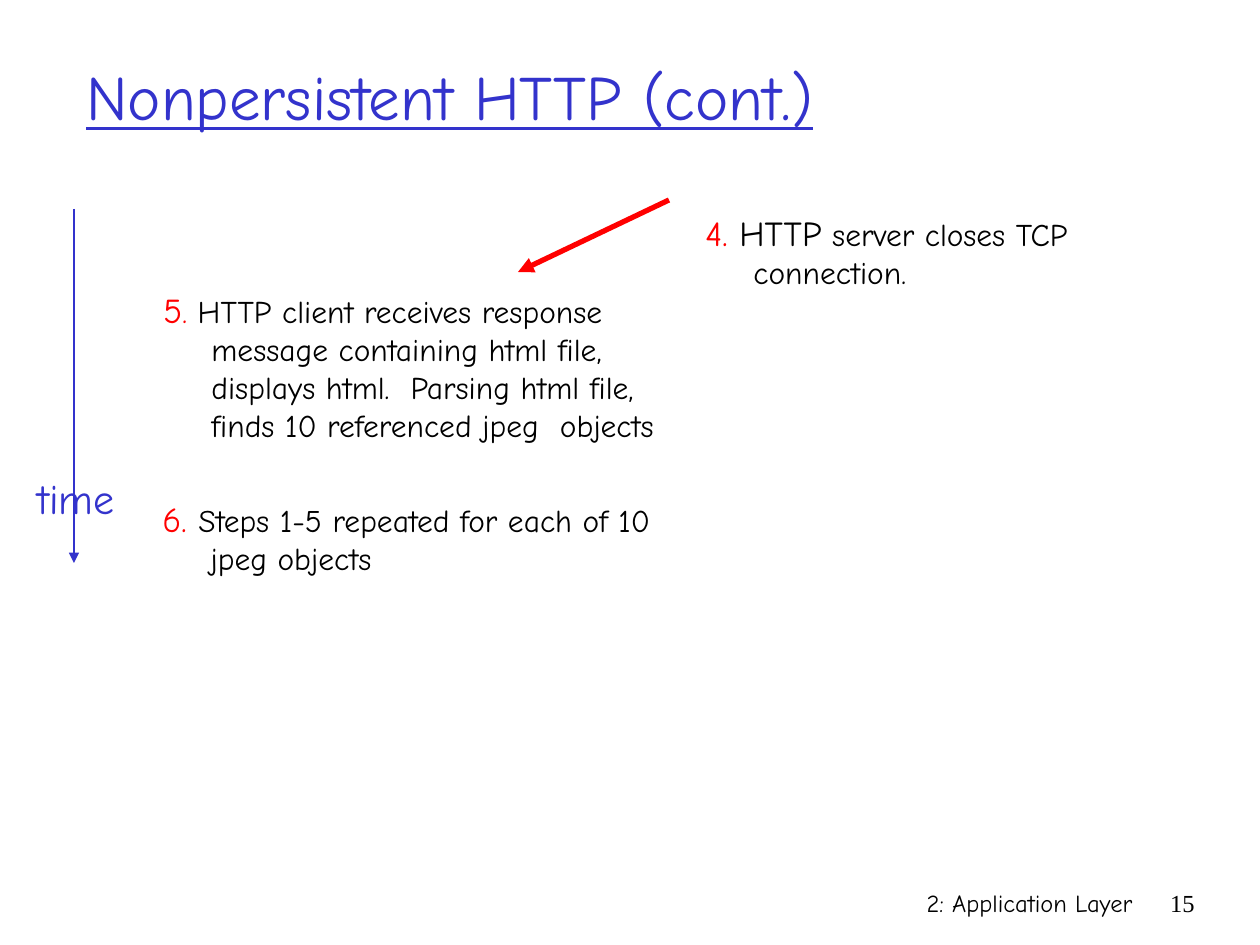
from pptx import Presentation
from pptx.dml.color import RGBColor as RGB
from pptx.enum.shapes import MSO_CONNECTOR as Connector
from pptx.enum.text import MSO_ANCHOR as Anchor, PP_ALIGN as Align
from pptx.oxml.ns import qn
from pptx.util import Emu, Pt
from lxml.etree import SubElement

BLUE = RGB(0x33, 0x33, 0xCC)
RED = RGB(0xFF, 0x00, 0x00)
BLACK = RGB(0x00, 0x00, 0x00)
EMU_PER_PX = 914400 / 126
BODY_FONT = "Comic Neue"
NUMBER_FONT = "Times New Roman"
HANGING_INDENT = 48


def px(length):
    return Emu(round(length * EMU_PER_PX))


class SlideBuilder:
    def __init__(self, slide):
        self.slide = slide

    def box(self, left, top, width, height, wrap=True):
        box = self.slide.shapes.add_textbox(*map(px, (left, top, width, height)))
        box.text_frame.word_wrap = wrap
        return box.text_frame

    def label(self, text, area, size, color=BLACK, font=BODY_FONT,
              align=Align.LEFT, anchor=Anchor.TOP, underline=False, wrap=True):
        frame = self.box(*area, wrap=wrap)
        frame.vertical_anchor = anchor
        paragraph = frame.paragraphs[0]
        paragraph.text = text
        paragraph.alignment = align
        paragraph.font.name = font
        paragraph.font.size = Pt(size)
        paragraph.font.color.rgb = color
        paragraph.font.underline = underline

    def step(self, area, pieces):
        paragraph = self.box(*area).paragraphs[0]
        properties = paragraph._p.get_or_add_pPr()
        properties.set("marL", str(px(HANGING_INDENT)))
        properties.set("indent", str(-px(HANGING_INDENT)))
        paragraph.font.name = BODY_FONT
        for text, size, color in pieces:
            run = paragraph.add_run()
            run.text = text
            run.font.size = Pt(size)
            run.font.color.rgb = color

    def arrow(self, start, end, color, width):
        arrow = self.slide.shapes.add_connector(
            Connector.STRAIGHT, *map(px, start + end))
        arrow.line.color.rgb = color
        arrow.line.width = Pt(width)
        SubElement(arrow.line._get_or_add_ln(), qn("a:tailEnd"), type="triangle")
        SubElement(arrow._element.spPr, qn("a:effectLst"))


def main():
    deck = Presentation()
    deck.slide_width, deck.slide_height = px(1260), px(945)
    page = SlideBuilder(deck.slides.add_slide(deck.slide_layouts[6]))

    page.label("2: Application Layer", (746, 882, 399, 63), 14, align=Align.RIGHT)
    page.label("15", (1144, 882, 63, 63), 14, font=NUMBER_FONT, align=Align.RIGHT)
    page.label("Nonpersistent HTTP (cont.)", (74, 35, 1071, 120), 36, BLUE,
               anchor=Anchor.MIDDLE, underline=True)

    page.step((151, 282, 525, 212), [
        ("5", 20, RED),
        (".", 18, RED),
        (" HTTP client receives response message containing html file, "
         "displays html.  Parsing html file, finds 10 referenced jpeg  objects",
         18, BLACK),
    ])
    page.step((150, 491, 525, 92), [
        ("6. ", 20, RED),
        ("Steps 1-5 repeated for each of 10 jpeg objects", 18, BLACK),
    ])
    page.step((693, 205, 525, 101), [
        ("4.", 20, RED),
        (" HTTP", 20, BLACK),
        (" server closes TCP connection.", 18, BLACK),
    ])

    page.arrow((74, 209), (74, 563), BLUE, 1.5)
    page.label("time", (20, 466, 112, 63), 24, BLUE, align=Align.CENTER, wrap=False)
    page.arrow((669, 200), (518, 272), RED, 3)

    deck.save("out.pptx")


if __name__ == "__main__":
    main()
